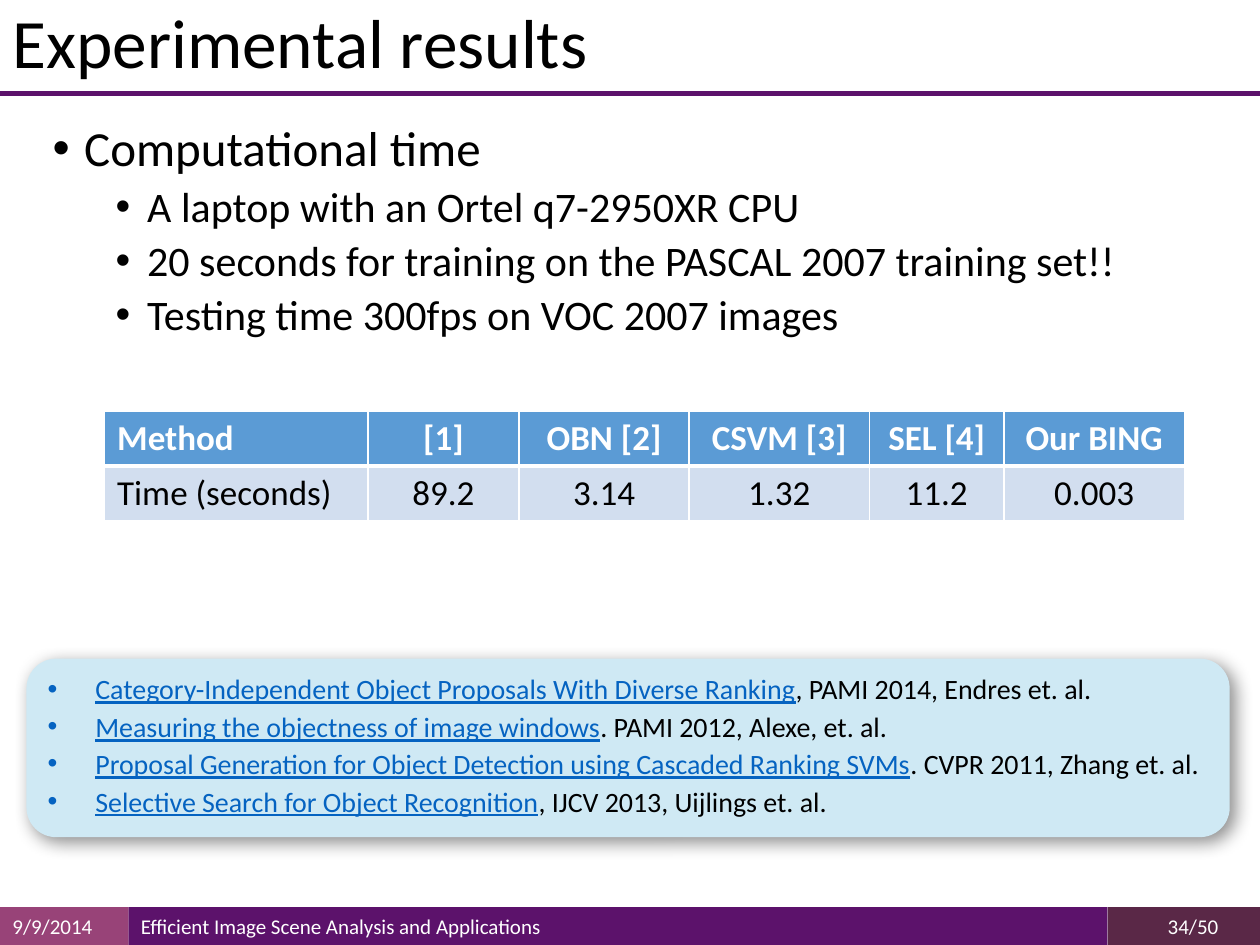
from collections import namedtuple
from dataclasses import dataclass

from lxml import etree
from pptx import Presentation
from pptx import util as u
from pptx.dml.color import RGBColor
from pptx.enum import shapes, text
from pptx.oxml import ns

Box = namedtuple("Box", "x y w h")
SHAPE, ALIGN = shapes.MSO_SHAPE, text.PP_ALIGN


@dataclass(frozen=True)
class Theme:
    font: str = "Calibri"
    ink: str = "000000"
    paper: str = "FFFFFF"
    plum: str = "5C126B"
    rose: str = "984378"
    wine: str = "5A2847"
    head: str = "5B9BD5"
    band: str = "D2DEEF"
    card: str = "CFE9F4"
    link: str = "0563C1"
    title: float = 39.6
    lead: int = 28
    sub: int = 24
    cell: int = 20
    ref: int = 16
    foot: int = 12


T = Theme()
PAGE = Box(0, 0, 10, 7.5)
POINTS = [
    (0, "Computational time"),
    (1, "A laptop with an Ortel q7-2950XR CPU"),
    (1, "20 seconds for training on the PASCAL 2007 training set!!"),
    (1, "Testing time 300fps on VOC 2007 images"),
]
TIMES = [
    ("Method", "[1]", "OBN [2]", "CSVM [3]", "SEL [4]", "Our BING"),
    ("Time (seconds)", "89.2", "3.14", "1.32", "11.2", "0.003"),
]
COLS = (2.09, 1.2, 1.35, 1.43, 1.07, 1.43)
REFS = [
    ("Category-Independent Object Proposals With Diverse Ranking",
     ", PAMI 2014, Endres et. al."),
    ("Measuring the objectness of image windows",
     ". PAMI 2012, Alexe, et. al."),
    ("Proposal Generation for Object Detection using Cascaded Ranking SVMs",
     ". CVPR 2011, Zhang et. al."),
    ("Selective Search for Object Recognition",
     ", IJCV 2013, Uijlings et. al."),
]


def part(box, x, y, w, h):
    """Give the box that takes these shares of another box."""
    return Box(box.x + x * box.w, box.y + y * box.h, w * box.w, h * box.h)


def inch(box):
    return [u.Inches(v) for v in box]


def rgb(code):
    return RGBColor.from_string(code)


def add_xml(parent, tag, **attrs):
    return etree.SubElement(parent, ns.qn("a:" + tag), attrs)


def write(para, words, size, color, bold=False, line=False):
    run = para.add_run()
    run.text = words
    font = run.font
    font.name, font.size, font.bold = T.font, u.Pt(size), bold
    font.underline = line
    font.color.rgb = rgb(color)


def bullet(para, left, hang):
    props = para._p.get_or_add_pPr()
    props.set("marL", str(u.Inches(left)))
    props.set("indent", str(-u.Inches(hang)))
    add_xml(props, "buFont", typeface="Arial")
    add_xml(props, "buChar", char="•")


def paras(frame, items):
    """Pair each item with a paragraph, using the first one there is."""
    for i, item in enumerate(items):
        yield i, frame.add_paragraph() if i else frame.paragraphs[0], item


def block(slide, box, fill, kind=SHAPE.RECTANGLE):
    shape = slide.shapes.add_shape(kind, *inch(box))
    shape.shadow.inherit = False
    shape.fill.solid()
    shape.fill.fore_color.rgb = rgb(fill)
    shape.line.fill.background()
    return shape


def footer(slide, box):
    cells = [
        (0.879, 0.121, T.wine, "34/50", ALIGN.RIGHT),
        (0.102, 0.777, T.plum, "Efficient Image Scene Analysis and Applications",
         ALIGN.LEFT),
        (0, 0.102, T.rose, "9/9/2014", ALIGN.LEFT),
    ]
    for x, w, fill, words, align in cells:
        frame = block(slide, part(box, x, 0, w, 1), fill).text_frame
        frame.vertical_anchor = text.MSO_ANCHOR.MIDDLE
        if align == ALIGN.RIGHT:
            frame.margin_right = u.Inches(0.33)
        para = frame.paragraphs[0]
        para.alignment = align
        write(para, words, T.foot, T.paper)


def header(slide, box):
    title = slide.shapes.title
    title.left, title.top, title.width, title.height = inch(
        part(box, 0, 0, 0.916, 0.99))
    frame = title.text_frame
    frame.word_wrap = True
    frame.auto_size = text.MSO_AUTO_SIZE.NONE
    frame.vertical_anchor = text.MSO_ANCHOR.MIDDLE
    para = frame.paragraphs[0]
    para.alignment, para.line_spacing = ALIGN.LEFT, 0.9
    write(para, "Experimental results", T.title, T.ink)

    base = box.y + box.h
    rule = slide.shapes.add_connector(
        shapes.MSO_CONNECTOR.STRAIGHT,
        *inch((box.x, base, box.x + box.w, base)))
    rule.line.color.rgb = rgb(T.plum)
    rule.line.width = u.Pt(3)
    add_xml(rule._element.spPr, "effectLst")


def points(slide, box):
    frame = slide.shapes.add_textbox(*inch(box)).text_frame
    frame.word_wrap = True
    for i, para, (level, words) in paras(frame, POINTS):
        para.level, para.line_spacing = level, 0.9
        bullet(para, 0.25 + 0.5 * level, 0.25)
        if i:
            para.space_before = u.Pt(5)
        write(para, words, T.sub if level else T.lead, T.ink)


def edge(cell, sides):
    props = cell._tc.get_or_add_tcPr()
    for side, width in sides.items():
        line = add_xml(props, "ln" + side, w=str(u.Pt(width)))
        add_xml(add_xml(line, "solidFill"), "srgbClr", val=T.paper)


def times(slide, box):
    table = slide.shapes.add_table(len(TIMES), len(COLS), *inch(box)).table
    for col, width in zip(table.columns, COLS):
        col.width = u.Inches(box.w * width / sum(COLS))
    for r, row in enumerate(TIMES):
        for c, words in enumerate(row):
            cell = table.cell(r, c)
            edge(cell, dict(L=1, R=1, T=3 if r else 1, B=1 if r else 3))
            cell.fill.solid()
            cell.fill.fore_color.rgb = rgb(T.band if r else T.head)
            para = cell.text_frame.paragraphs[0]
            para.alignment = ALIGN.CENTER if c else ALIGN.LEFT
            write(para, words, T.cell, T.ink if r else T.paper, bold=not r)


def shade(shape):
    """Cast a soft shadow down to the right."""
    glow = add_xml(shape._element.spPr.find(ns.qn("a:effectLst")), "outerShdw",
                   blurRad=str(u.Pt(10)), dist=str(u.Pt(4)),
                   dir=str(45 * 60000), algn="tl", rotWithShape="0")
    add_xml(add_xml(glow, "srgbClr", val=T.ink), "alpha", val="43000")


def refs(slide, box):
    card = block(slide, box, T.card, SHAPE.ROUNDED_RECTANGLE)
    shade(card)
    frame = card.text_frame
    frame.word_wrap = True
    frame.vertical_anchor = text.MSO_ANCHOR.MIDDLE
    for i, para, (name, source) in paras(frame, REFS):
        para.alignment, para.line_spacing = ALIGN.JUSTIFY, 0.8
        para.space_after = u.Pt(3)
        bullet(para, 0.38, 0.38)
        if i:
            para.space_before = u.Pt(3)
        write(para, name, T.ref, T.link, line=True)
        write(para, source, T.ref, T.ink)


def main():
    deck = Presentation()
    deck.slide_width, deck.slide_height = inch(PAGE[2:])
    slide = deck.slides.add_slide(deck.slide_layouts[5])
    footer(slide, part(PAGE, 0, 0.96, 1, 0.04))
    header(slide, part(PAGE, 0, 0, 1, 0.099))
    points(slide, part(PAGE, 0.032, 0.125, 0.931, 0.25))
    times(slide, part(PAGE, 0.083, 0.435, 0.857, 0.116))
    refs(slide, part(PAGE, 0.021, 0.697, 0.955, 0.189))
    deck.save("out.pptx")


if __name__ == "__main__":
    main()
